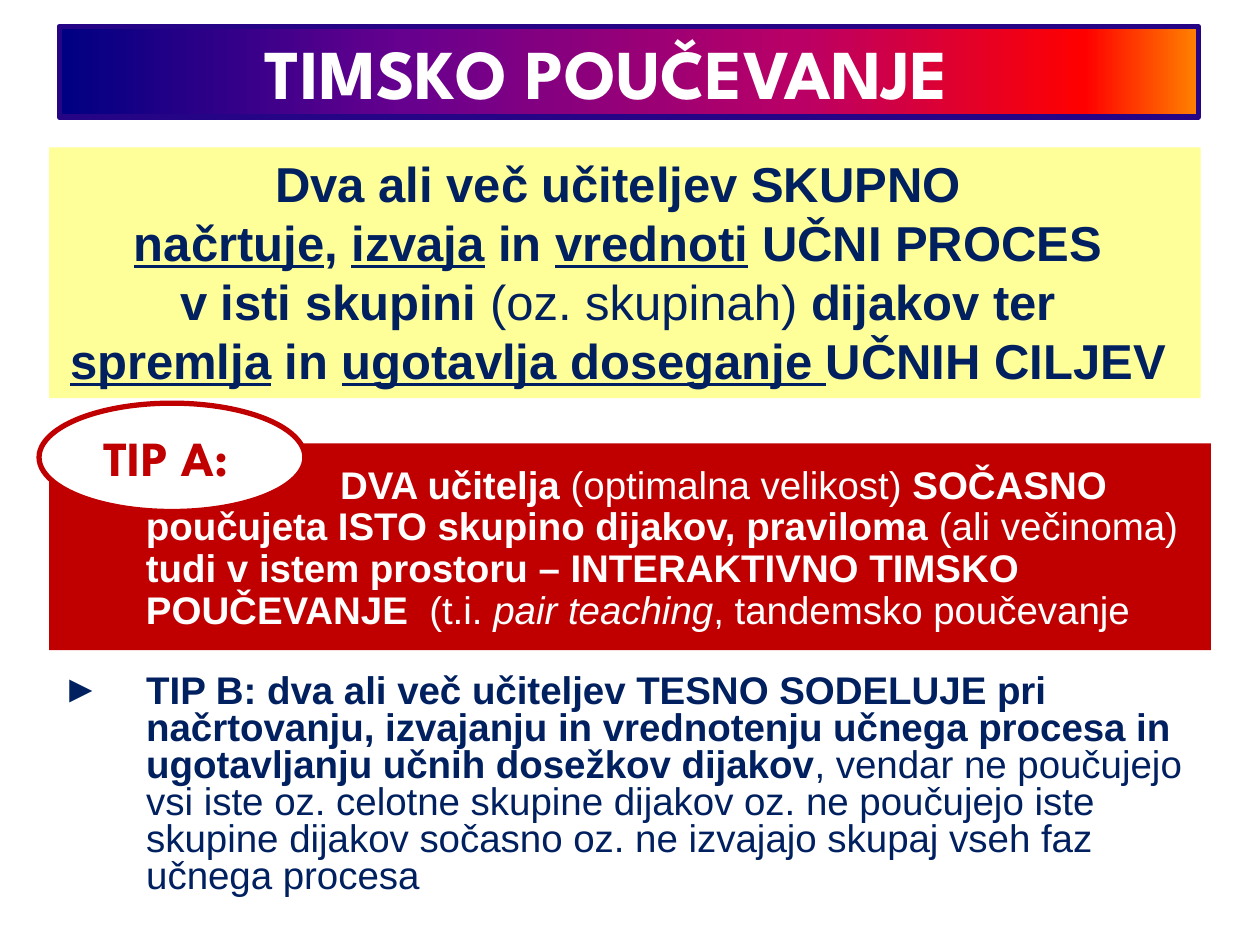
from lxml import etree
from pptx import Presentation
from pptx.dml.color import RGBColor
from pptx.enum.shapes import MSO_SHAPE
from pptx.enum.text import MSO_ANCHOR, MSO_AUTO_SIZE, PP_ALIGN
from pptx.oxml.ns import qn
from pptx.util import Inches, Pt

RECT, OVAL = MSO_SHAPE.RECTANGLE, MSO_SHAPE.OVAL
TOP, MIDDLE = MSO_ANCHOR.TOP, MSO_ANCHOR.MIDDLE
LEFT, CENTER = PP_ALIGN.LEFT, PP_ALIGN.CENTER
NO_FIT = MSO_AUTO_SIZE.NONE

COLORS = {"navy": "002060", "yellow": "FFFF99", "red": "C00000",
          "white": "FFFFFF", "border": "260486"}
TITLE_STOPS = [(0, "000082"), (30, "66008F"), (65, "BA0066"),
               (90, "FF0000"), (100, "FF8200")]
BODY_FONT, DISPLAY_FONT = "Arial", "League Spartan"
HANG = 0.67

BOLD, PLAIN = {"bold": True}, {"bold": False}
UNDERLINED = {"bold": True, "underline": True}
ITALIC = {"bold": False, "italic": True}

DEFINITION = [
    [("Dva ali več učiteljev SKUPNO", BOLD)],
    [("načrtuje", UNDERLINED), (", ", BOLD), ("izvaja", UNDERLINED),
     (" in ", BOLD), ("vrednoti", UNDERLINED), (" UČNI PROCES", BOLD)],
    [("v isti skupini ", BOLD), ("(oz. skupinah) ", PLAIN),
     ("dijakov ter", BOLD)],
    [("spremlja", UNDERLINED), (" in ", BOLD),
     ("ugotavlja doseganje ", UNDERLINED), ("UČNIH CILJEV", BOLD)],
]
TYPE_A = [
    ("DVA učitelja ", BOLD), ("(optimalna velikost) ", PLAIN),
    ("SOČASNO poučujeta ISTO skupino dijakov, praviloma ", BOLD),
    ("(ali večinoma) ", PLAIN),
    ("tudi v istem prostoru – INTERAKTIVNO TIMSKO POUČEVANJE  ", BOLD),
    ("(t.i. ", PLAIN), ("pair teaching", ITALIC),
    (", tandemsko poučevanje", PLAIN),
]
TYPE_B = [
    ("TIP B: dva ali več učiteljev TESNO SODELUJE pri načrtovanju, "
     "izvajanju in vrednotenju učnega procesa in ugotavljanju učnih "
     "dosežkov dijakov", BOLD),
    (", vendar ne poučujejo vsi iste oz. celotne skupine dijakov oz. ne "
     "poučujejo iste skupine dijakov sočasno oz. ne izvajajo skupaj vseh "
     "faz učnega procesa", PLAIN),
]


def rgb(name):
    return RGBColor.from_string(COLORS[name])


def place(sp, left, top, width, height):
    sp.left, sp.top = Inches(left), Inches(top)
    sp.width, sp.height = Inches(width), Inches(height)


def add_box(s, kind, at, fill, line=None):
    sp = s.shapes.add_shape(kind, *map(Inches, at))
    sp.shadow.inherit = False
    sp.fill.solid()
    sp.fill.fore_color.rgb = rgb(fill)
    if line:
        set_line(sp, line)
    else:
        sp.line.fill.background()
    return sp


def set_line(sp, color):
    sp.line.color.rgb = rgb(color)
    sp.line.width = Pt(3)


def set_gradient(sp, stops):
    sp.fill.gradient()
    sp.fill.gradient_angle = 0
    stop_list = sp.fill._fill._gradFill.find(qn("a:gsLst"))
    for old in list(stop_list):
        stop_list.remove(old)
    for percent, color in stops:
        gs = etree.SubElement(stop_list, qn("a:gs"), pos=str(percent * 1000))
        etree.SubElement(gs, qn("a:srgbClr"), val=color)


def set_indent(p, margin, first=0, bullet=None):
    pPr = p._p.get_or_add_pPr()
    pPr.set("marL", str(Inches(margin)))
    pPr.set("indent", str(Inches(first)))
    if bullet:
        etree.SubElement(pPr, qn("a:buFont"), typeface=BODY_FONT)
        etree.SubElement(pPr, qn("a:buChar"), char=bullet)
    else:
        etree.SubElement(pPr, qn("a:buNone"))


def set_frame(sp, anchor=TOP, top=0.05, right=0.1):
    formats = {"word_wrap": True, "auto_size": NO_FIT,
               "vertical_anchor": anchor, "margin_left": Inches(0.1),
               "margin_right": Inches(right), "margin_top": Inches(top),
               "margin_bottom": Inches(0.05)}
    for name, value in formats.items():
        setattr(sp.text_frame, name, value)


def write(sp, paragraphs, size, color, font=BODY_FONT, align=LEFT,
          spacing=1.0, **indent):
    """Fill a shape with paragraphs, each a list of (text, format) runs."""
    tf = sp.text_frame
    for i, runs in enumerate(paragraphs):
        p = tf.add_paragraph() if i else tf.paragraphs[0]
        p.alignment, p.line_spacing = align, spacing
        p.space_before = Pt(0)
        set_indent(p, **(indent or {"margin": 0}))
        for text, formats in runs:
            r = p.add_run()
            r.text = text
            r.font.color.rgb = rgb(color)
            for name, value in {"name": font, "size": Pt(size),
                                **formats}.items():
                setattr(r.font, name, value)


def add_title(s):
    sp = s.shapes.title
    place(sp, 0.47, 0.21, 9.04, 0.72)
    set_gradient(sp, TITLE_STOPS)
    set_line(sp, "border")
    set_frame(sp, MIDDLE)
    write(sp, [[("TIMSKO POUČEVANJE", BOLD)]], 40, "white", DISPLAY_FONT,
          margin=1.53)


def add_definition(s):
    sp = add_box(s, RECT, (0.39, 1.17, 9.14, 1.99), "yellow")
    set_frame(sp, right=0.21)
    write(sp, DEFINITION, 28, "navy", align=CENTER)


def add_type_a(s):
    sp = add_box(s, RECT, (0.39, 3.52, 9.22, 1.64), "red")
    set_frame(sp, top=0.18)
    write(sp, [TYPE_A], 22, "white", spacing=0.9, margin=HANG, first=1.54)

    label = add_box(s, OVAL, (0.31, 3.2, 2.11, 0.86), "white", "red")
    set_frame(label, MIDDLE, right=0.2)
    write(label, [[("TIP A:", BOLD)]], 28, "red", DISPLAY_FONT, CENTER)


def add_type_b(s):
    sp = s.placeholders[1]
    place(sp, 0.39, 5.31, 9.22, 1.95)
    set_frame(sp)
    write(sp, [TYPE_B], 22, "navy", spacing=0.8,
          margin=HANG, first=-HANG, bullet="►")


def main():
    prs = Presentation()
    prs.slide_width, prs.slide_height = Inches(10), Inches(7.5)
    s = prs.slides.add_slide(prs.slide_layouts[1])
    add_title(s)
    add_definition(s)
    add_type_a(s)
    add_type_b(s)
    prs.save("out.pptx")


if __name__ == "__main__":
    main()
